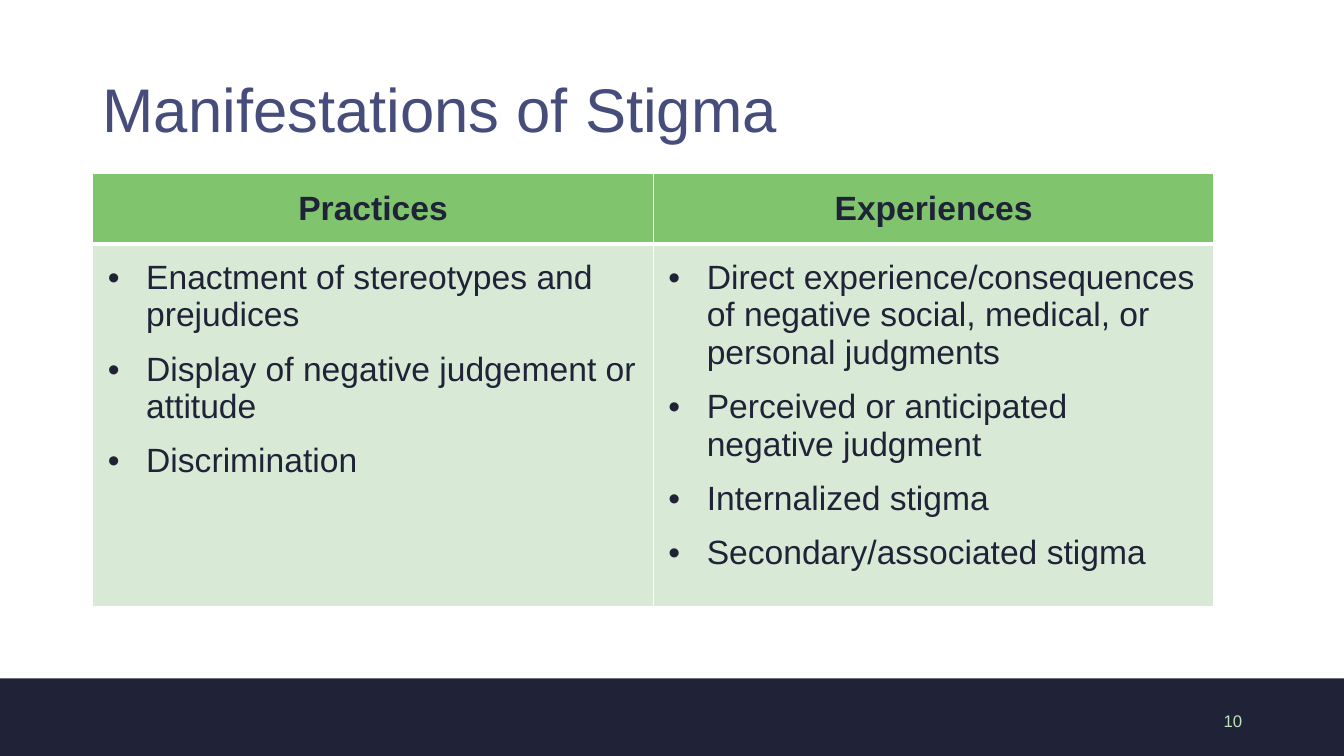
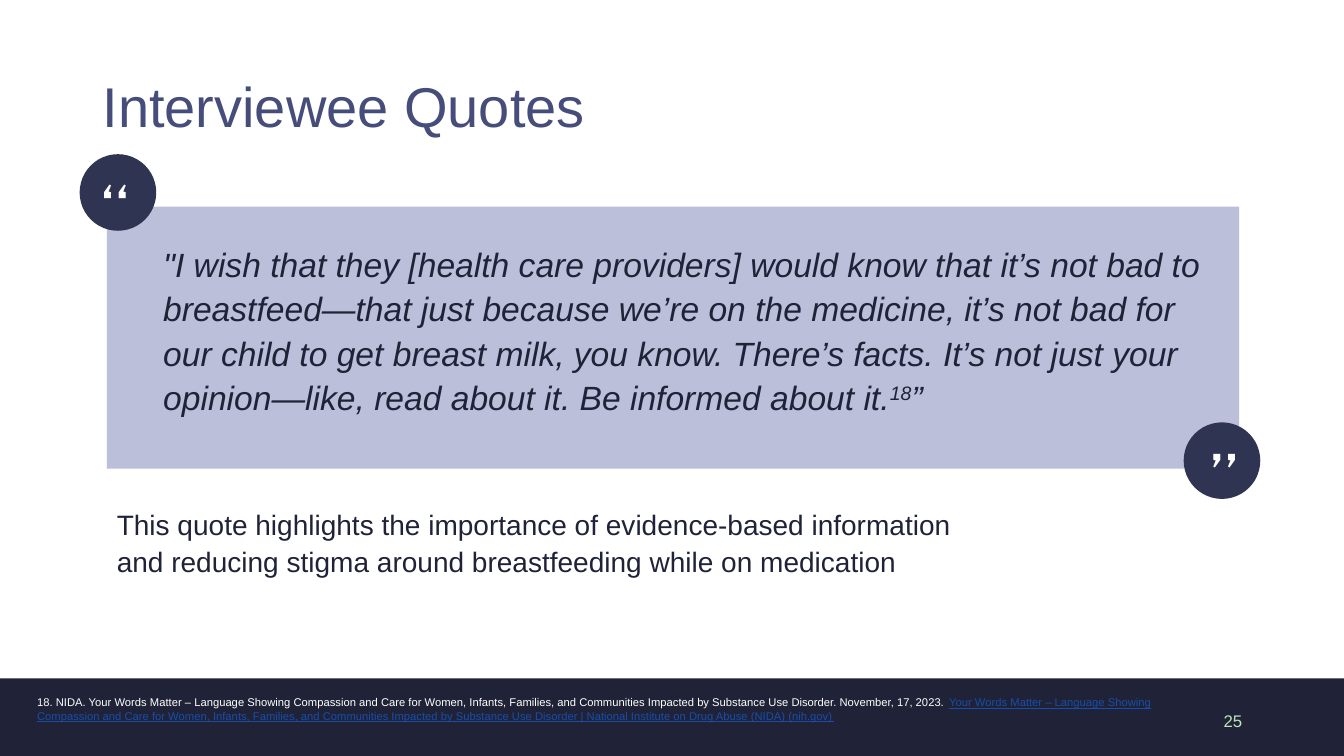
from lxml.etree import SubElement
from pptx import Presentation
from pptx.dml.color import RGBColor
from pptx.enum.shapes import MSO_SHAPE
from pptx.enum.text import MSO_ANCHOR, PP_ALIGN
from pptx.oxml.ns import qn
from pptx.util import Inches, Pt

THEME = {
    "navy": RGBColor.from_string("202338"),
    "badge": RGBColor.from_string("2F3453"),
    "title": RGBColor.from_string("464D7B"),
    "panel": RGBColor.from_string("BCBFD9"),
    "header": RGBColor.from_string("80C56E"),
    "cell": RGBColor.from_string("D8EAD5"),
    "number": RGBColor.from_string("BFE2B6"),
    "link": RGBColor.from_string("174DA8"),
    "white": RGBColor.from_string("FFFFFF"),
    "font": "Arial", "quote_font": "Cabin",
    "large": Pt(24), "body": Pt(20), "small": Pt(12), "note": Pt(8), "mark": Pt(50),
}


def add_text(tf, runs, size, color, para=None, new=False, font=THEME["font"]):
    """Write one paragraph; runs are (text, font attributes) pairs."""
    tf.word_wrap = True
    p = tf.add_paragraph() if new else tf.paragraphs[0]
    for name, value in (para or {}).items():
        setattr(p, name, value)
    for text, attrs in runs:
        r = p.add_run()
        r.text = text
        r.font.color.rgb = color
        for name, value in {"size": size, "name": font, **attrs}.items():
            if name == "color":
                r.font.color.rgb = value
            elif name == "baseline":
                r.font._element.set("baseline", value)
            else:
                setattr(r.font, name, value)
    return p


def add_filled(s, kind, box, color):
    sp = s.shapes.add_shape(kind, *map(Inches, box))
    sp.shadow.inherit = False
    sp.fill.solid()
    sp.fill.fore_color.rgb = color
    sp.line.fill.background()
    return sp


prs = Presentation()
prs.slide_width, prs.slide_height = Inches(13.33), Inches(7.5)

# Shared frame: footer band, title and page number
slides = []
for title, size, number in [("Manifestations of Stigma", 44, "10"),
                            ("Interviewee Quotes", 40, "25")]:
    s = prs.slides.add_slide(prs.slide_layouts[6])
    add_filled(s, MSO_SHAPE.RECTANGLE, (0, 6.73, 13.33, 0.77), THEME["navy"])
    tf = s.shapes.add_textbox(Inches(0.92), Inches(0.74), Inches(11.97), Inches(0.75)).text_frame
    add_text(tf, [(title, {})], Pt(size), THEME["title"], {"line_spacing": 0.9})
    tf = s.shapes.add_textbox(Inches(9.42), Inches(6.95), Inches(3), Inches(0.4)).text_frame
    tf.vertical_anchor = MSO_ANCHOR.MIDDLE
    add_text(tf, [(number, {})], THEME["small"], THEME["number"], {"alignment": PP_ALIGN.RIGHT})
    slides.append(s)
table_slide, quote_slide = slides

# Table of practices and experiences
columns = {
    "Practices": [
        "Enactment of stereotypes and prejudices",
        "Display of negative judgement or attitude",
        "Discrimination",
    ],
    "Experiences": [
        "Direct experience/consequences of negative social, medical, or personal judgments",
        "Perceived or anticipated negative judgment",
        "Internalized stigma",
        "Secondary/associated stigma",
    ],
}
table = table_slide.shapes.add_table(2, 2, Inches(0.92), Inches(1.72),
                                     Inches(11.12), Inches(4.09)).table
table.horz_banding = False
table.rows[0].height, table.rows[1].height = Inches(0.61), Inches(3.48)
for col, (heading, items) in enumerate(columns.items()):
    table.columns[col].width = Inches(5.56)
    head, body = table.cell(0, col), table.cell(1, col)
    head.vertical_anchor = MSO_ANCHOR.MIDDLE
    add_text(head.text_frame, [(heading, {"bold": True})], THEME["large"], THEME["navy"],
             {"alignment": PP_ALIGN.CENTER})
    for i, item in enumerate(items):
        p = add_text(body.text_frame, [(item, {})], THEME["large"], THEME["navy"],
                     {"space_after": Pt(12)}, new=i > 0)
        pPr = p._p.get_or_add_pPr()
        pPr.set("marL", str(Inches(0.38)))
        pPr.set("indent", str(Inches(-0.38)))
        SubElement(pPr, qn("a:buFont"), typeface=THEME["font"])
        SubElement(pPr, qn("a:buChar"), char="•")
    for cell, color, edges in [(head, "header", {"L": 1, "R": 1, "T": 1, "B": 3}),
                               (body, "cell", {"L": 1, "R": 1, "T": 3, "B": 1})]:
        for side in ("left", "right", "top", "bottom"):
            setattr(cell, f"margin_{side}", Inches(0.15))
        tcPr = cell._tc.get_or_add_tcPr()
        for edge, width in edges.items():
            ln = SubElement(tcPr, qn(f"a:ln{edge}"), w=str(Pt(width)))
            fill = SubElement(ln, qn("a:solidFill"))
            SubElement(fill, qn("a:srgbClr"), val=str(THEME["white"]))
        cell.fill.solid()
        cell.fill.fore_color.rgb = THEME[color]

# Quote panel, takeaway and source
s = quote_slide
add_filled(s, MSO_SHAPE.RECTANGLE, (1.06, 2.05, 11.23, 2.6), THEME["panel"])
quote = ('"I wish that they [health care providers] would know that it’s not bad to '
         "breastfeed—that just because we’re on the medicine, it’s not bad for our child "
         "to get breast milk, you know. There’s facts. It’s not just your opinion—like, "
         "read about it. Be informed about it.")
takeaway = ("This quote highlights the importance of evidence-based information and "
            "reducing stigma around breastfeeding while on medication")
work = ("Your Words Matter – Language Showing Compassion and Care for Women, Infants, "
        "Families, and Communities Impacted by Substance Use Disorder")
source = [(f"18. NIDA. {work}. November, 17, 2023. ", {}),
          (f"{work} | National Institute on Drug Abuse (NIDA) (nih.gov)",
           {"color": THEME["link"], "underline": True})]
italic = {"italic": True}
for box, runs, size, color, para in [
    ((1.52, 2.33, 10.52, 1.84),
     [(quote, italic), ("18", {**italic, "baseline": "30000"}), ("”", italic)],
     THEME["large"], THEME["navy"], {"line_spacing": 1.1}),
    ((1.06, 4.95, 8.95, 0.81), [(takeaway, {})], THEME["body"], THEME["navy"],
     {"line_spacing": 1.1, "space_before": Pt(10), "space_after": Pt(6)}),
    ((0.27, 6.85, 11.45, 0.5), source, THEME["note"], THEME["white"], {}),
]:
    tf = s.shapes.add_textbox(*map(Inches, box)).text_frame
    add_text(tf, runs, size, color, para)

# Opening and closing badges; the closing one is turned upside down
for badge_at, mark_at, turn in [((0.79, 1.53), (0.91, 1.61), 0),
                                ((11.74, 4.19), (11.74, 3.93), 180)]:
    add_filled(s, MSO_SHAPE.OVAL, (*badge_at, 0.76, 0.76), THEME["badge"])
    mark = s.shapes.add_textbox(*map(Inches, (*mark_at, 0.64, 0.94)))
    mark.rotation = turn
    add_text(mark.text_frame, [("“", {})], THEME["mark"], THEME["white"],
             font=THEME["quote_font"])

prs.save("out.pptx")
